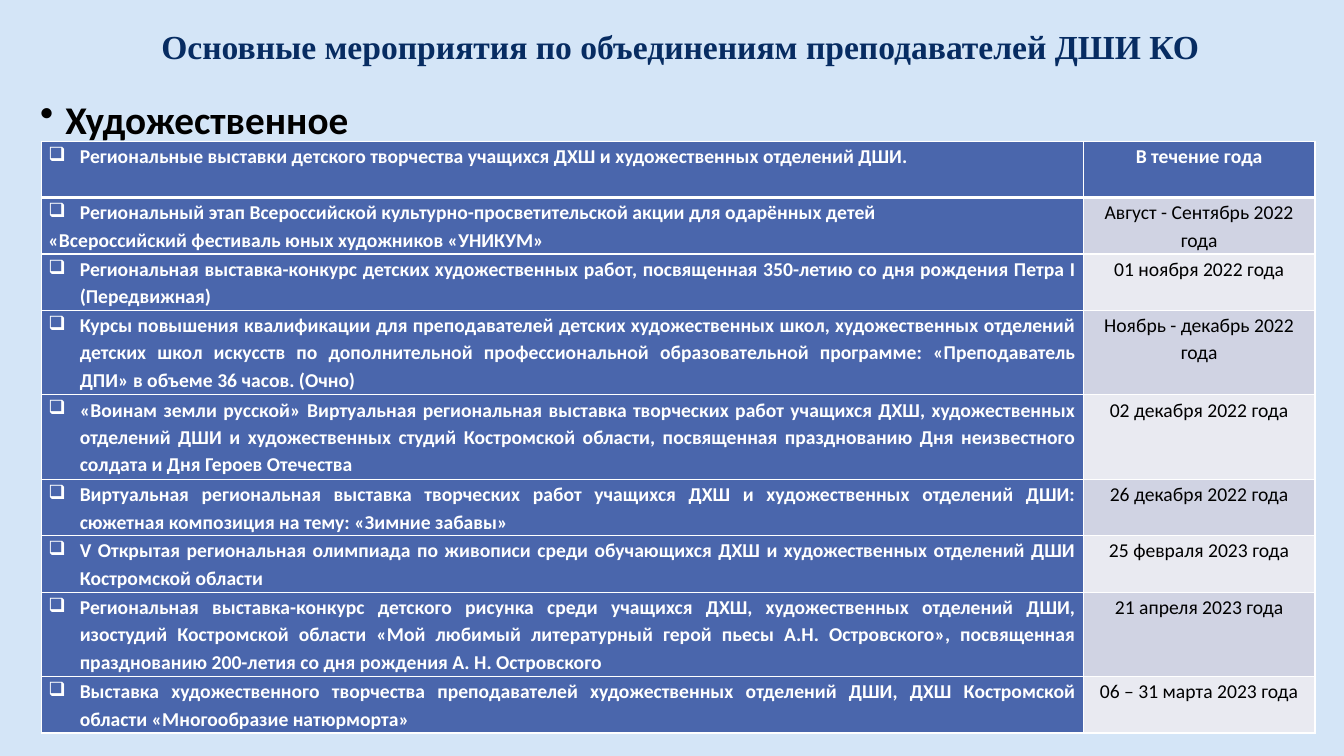
import lxml.etree
import pptx
import pptx.dml.color
import pptx.enum.text
import pptx.oxml.ns
import pptx.util

Cm, Pt = pptx.util.Cm, pptx.util.Pt
ALIGN = pptx.enum.text.PP_ALIGN
ANCHOR = pptx.enum.text.MSO_ANCHOR

# Content
TITLE = "Основные мероприятия по объединениям преподавателей ДШИ КО"
SECTION = "Художественное"
# (lines of height, event paragraphs, date)
EVENTS = [
    (2, ["Региональные выставки детского творчества учащихся ДХШ и художественных отделений ДШИ."],
     "В течение года"),
    (2, ["Региональный этап Всероссийской культурно-просветительской акции для одарённых детей",
         "«Всероссийский фестиваль юных художников «УНИКУМ»"],
     "Август - Сентябрь 2022 года"),
    (2, ["Региональная выставка-конкурс детских художественных работ, посвященная 350-летию "
         "со дня рождения Петра I (Передвижная)"],
     "01 ноября 2022 года"),
    (3, ["Курсы повышения квалификации для преподавателей детских художественных школ, "
         "художественных отделений детских школ искусств по дополнительной профессиональной "
         "образовательной программе: «Преподаватель ДПИ» в объеме 36 часов. (Очно)"],
     "Ноябрь - декабрь 2022 года"),
    (3, ["«Воинам земли русской» Виртуальная региональная выставка творческих работ учащихся ДХШ, "
         "художественных отделений ДШИ и художественных студий Костромской области, посвященная "
         "празднованию Дня неизвестного солдата и Дня Героев Отечества"],
     "02 декабря 2022 года"),
    (2, ["Виртуальная региональная выставка творческих работ учащихся ДХШ и художественных "
         "отделений ДШИ: сюжетная композиция на тему: «Зимние забавы»"],
     "26 декабря 2022 года"),
    (2, ["V Открытая региональная олимпиада по живописи среди обучающихся ДХШ и художественных "
         "отделений ДШИ Костромской области"],
     "25 февраля 2023 года"),
    (3, ["Региональная выставка-конкурс детского рисунка среди учащихся ДХШ, художественных "
         "отделений ДШИ, изостудий Костромской области «Мой любимый литературный герой пьесы "
         "А.Н. Островского», посвященная празднованию 200-летия со дня рождения А. Н. Островского"],
     "21 апреля 2023 года"),
    (2, ["Выставка художественного творчества преподавателей художественных отделений ДШИ, "
         "ДХШ Костромской области «Многообразие натюрморта»"],
     "06 – 31 марта 2023 года"),
]


# Theme
def rgb(code):
    return pptx.dml.color.RGBColor.from_string(code)


THEME = {
    "background": rgb("D4E5F7"),
    "accent": rgb("4A66AC"),
    "bands": [rgb("E9EAF1"), rgb("D0D3E3")],
    "border": "FFFFFF",
    "title": {"name": "Times New Roman", "size": Pt(24), "bold": True, "color": rgb("072C62")},
    "section": {"name": "Calibri", "size": Pt(28), "bold": True, "color": rgb("000000")},
    "event": {"name": "Calibri", "size": Pt(14), "bold": True, "color": rgb("FFFFFF")},
    "date": {"name": "Calibri", "size": Pt(14), "bold": False, "color": rgb("000000")},
}

# Layout
TITLE_BOX = Cm(2.54), Cm(0.36), Cm(29.21), Cm(1.45)
SECTION_BOX = Cm(0.76), Cm(2.03), Cm(32.39), Cm(16.26)
TABLE_LEFT, TABLE_TOP = Cm(1.04), Cm(3.56)
COLUMN_WIDTHS = [Cm(26.26), Cm(5.84)]
LINE_HEIGHT = Cm(0.71)
CELL_FORMAT = {"margin_left": Cm(0.18), "margin_right": Cm(0.18),
               "margin_top": 0, "margin_bottom": 0}


def apply(target, values):
    for key, value in values.items():
        setattr(target, key, value)


def write(paragraph, text, style, **layout):
    apply(paragraph, layout)
    run = paragraph.add_run()
    run.text = text
    apply(run.font, {key: value for key, value in style.items() if key != "color"})
    run.font.color.rgb = style["color"]


def add_bullet(paragraph, symbol, indent):
    properties = paragraph._p.get_or_add_pPr()
    properties.set("marL", str(indent))
    properties.set("indent", str(-indent))
    bullet = lxml.etree.SubElement(properties, pptx.oxml.ns.qn("a:buChar"))
    bullet.set("char", symbol)


def add_border(cell, side, width):
    line = lxml.etree.SubElement(cell._tc.get_or_add_tcPr(), pptx.oxml.ns.qn("a:ln" + side))
    line.set("w", str(Pt(width)))
    fill = lxml.etree.SubElement(line, pptx.oxml.ns.qn("a:solidFill"))
    lxml.etree.SubElement(fill, pptx.oxml.ns.qn("a:srgbClr")).set("val", THEME["border"])


def style_cell(cell, color, is_header):
    apply(cell, CELL_FORMAT)
    for side in "LRTB" if is_header else "LRB":
        add_border(cell, side, 3 if is_header and side == "B" else 1)
    cell.fill.solid()
    cell.fill.fore_color.rgb = color


def add_text(slide, box, anchor):
    frame = slide.shapes.add_textbox(*box).text_frame
    apply(frame, {"word_wrap": True, "vertical_anchor": anchor})
    return frame.paragraphs[0]


def add_schedule(slide):
    total_lines = sum(lines for lines, _, _ in EVENTS)
    schedule = slide.shapes.add_table(len(EVENTS), 2, TABLE_LEFT, TABLE_TOP,
                                      sum(COLUMN_WIDTHS), total_lines * LINE_HEIGHT).table
    for column, width in zip(schedule.columns, COLUMN_WIDTHS):
        column.width = width

    for index, (lines, event, date) in enumerate(EVENTS):
        is_header = index == 0
        schedule.rows[index].height = lines * LINE_HEIGHT
        event_cell, date_cell = schedule.cell(index, 0), schedule.cell(index, 1)
        style_cell(event_cell, THEME["accent"], is_header)
        style_cell(date_cell, THEME["accent"] if is_header else THEME["bands"][index % 2], is_header)

        # Only the first paragraph of an event carries a bullet
        for number, text in enumerate(event):
            frame = event_cell.text_frame
            paragraph = frame.add_paragraph() if number else frame.paragraphs[0]
            write(paragraph, text, THEME["event"], alignment=ALIGN.JUSTIFY, line_spacing=1.15)
            if number == 0:
                add_bullet(paragraph, "❑", Cm(0.79))
        write(date_cell.text_frame.paragraphs[0], date, THEME["event" if is_header else "date"],
              alignment=ALIGN.CENTER, line_spacing=1.15)


def main():
    deck = pptx.Presentation()
    apply(deck, {"slide_width": Cm(33.87), "slide_height": Cm(19.05)})
    slide = deck.slides.add_slide(deck.slide_layouts[6])
    slide.background.fill.solid()
    slide.background.fill.fore_color.rgb = THEME["background"]

    # Section heading and title
    section = add_text(slide, SECTION_BOX, ANCHOR.TOP)
    write(section, SECTION, THEME["section"], line_spacing=1.2, space_before=Pt(10))
    add_bullet(section, "•", Cm(0.64))
    write(add_text(slide, TITLE_BOX, ANCHOR.MIDDLE), TITLE, THEME["title"],
          alignment=ALIGN.CENTER, line_spacing=1.15)

    # Table of events
    add_schedule(slide)
    deck.save("out.pptx")


if __name__ == "__main__":
    main()
